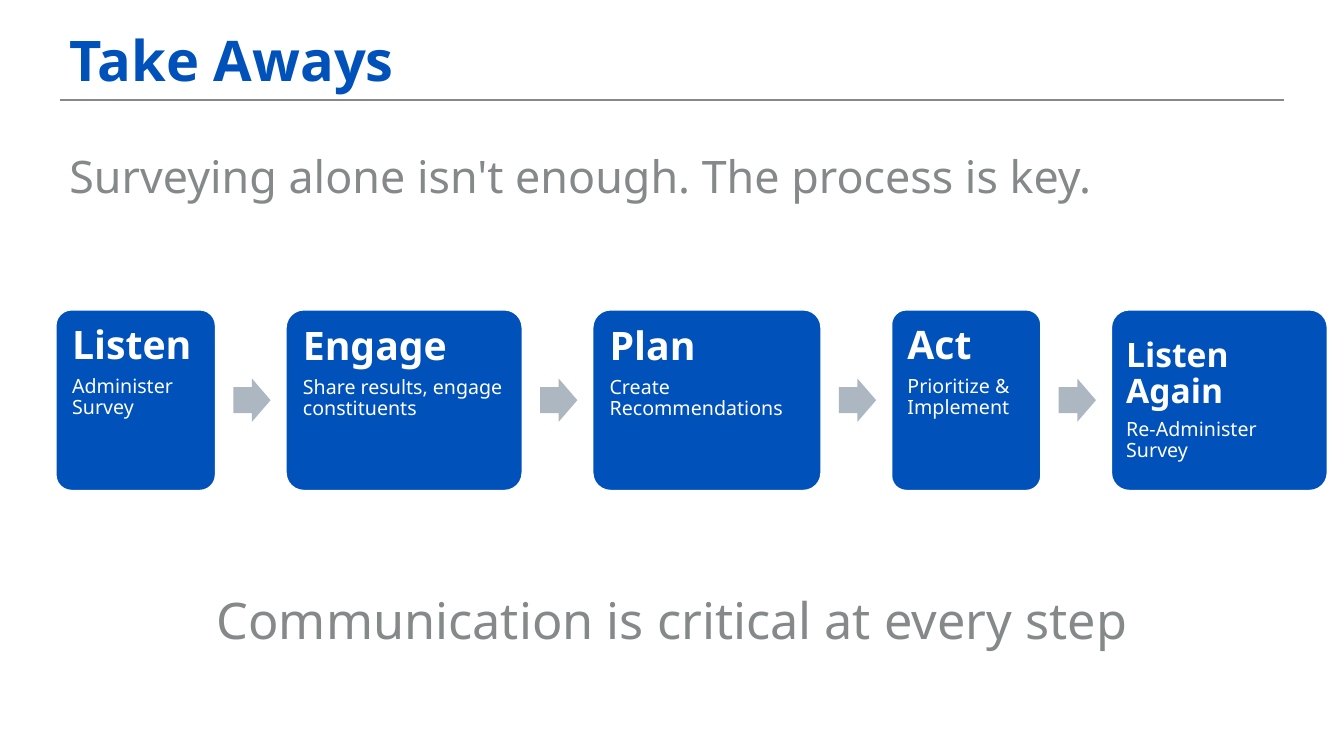
"""Build the Take Aways slide with a five-step process."""
from lxml.etree import SubElement
from pptx import Presentation
from pptx.dml.color import RGBColor
from pptx.enum.shapes import MSO_CONNECTOR, MSO_SHAPE
from pptx.enum.text import MSO_ANCHOR, MSO_AUTO_SIZE, PP_ALIGN
from pptx.oxml.ns import qn
from pptx.util import Cm, Pt

BLUE = RGBColor(0x00, 0x51, 0xBA)
GRAY = RGBColor(0x85, 0x89, 0x8A)
STEEL = RGBColor(0xAC, 0xB7, 0xC1)
WHITE = RGBColor(0xFF, 0xFF, 0xFF)

STEPS = [
    ("Listen", "Administer Survey", 4.04),
    ("Engage", "Share results, engage constituents", 5.97),
    ("Plan", "Create Recommendations", 5.77),
    ("Act", "Prioritize & Implement", 3.78),
    ("Listen Again", "Re-Administer Survey", 5.46),
]
LEFT, TOP, TALL, GAP = 1.4, 7.8, 4.57, 1.76


def write(par, text, size=14, color=WHITE, bold=False,
          align=PP_ALIGN.LEFT, line=1.0, after=0):
    par.alignment = align
    par.line_spacing = line
    par.space_before = Pt(0)
    par.space_after = Pt(after)
    run = par.add_run()
    run.text = text
    font = run.font
    font.name = "Noto Sans"
    font.size = Pt(size)
    font.bold = bold
    font.color.rgb = color


class Deck:
    def __init__(self):
        self.file = Presentation()
        self.file.slide_width = Cm(33.87)
        self.file.slide_height = Cm(19.05)
        self.slide = self.file.slides.add_slide(self.file.slide_layouts[5])
        self.shapes = self.slide.shapes

    def title(self, text, x, y, w, h):
        box = self.shapes.title
        box.left, box.top, box.width, box.height = Cm(x), Cm(y), Cm(w), Cm(h)
        frame = box.text_frame
        frame.auto_size = MSO_AUTO_SIZE.NONE
        frame.vertical_anchor = MSO_ANCHOR.TOP
        frame.margin_left = Cm(0.41)
        write(frame.paragraphs[0], text, 40, BLUE, True, line=0.9, after=6)

    def label(self, text, x, y, w, h, **style):
        frame = self.shapes.add_textbox(Cm(x), Cm(y), Cm(w), Cm(h)).text_frame
        frame.word_wrap = True
        frame.auto_size = MSO_AUTO_SIZE.SHAPE_TO_FIT_TEXT
        write(frame.paragraphs[0], text, color=GRAY, **style)

    def rule(self, x, y, end):
        line = self.shapes.add_connector(
            MSO_CONNECTOR.STRAIGHT, Cm(x), Cm(y), Cm(end), Cm(y))
        line.line.color.rgb = GRAY
        line.line.width = Pt(1.5)
        SubElement(line.element.spPr, qn("a:effectLst"))

    def block(self, kind, x, y, w, h, fill):
        shape = self.shapes.add_shape(kind, Cm(x), Cm(y), Cm(w), Cm(h))
        shape.shadow.inherit = False
        shape.fill.solid()
        shape.fill.fore_color.rgb = fill
        shape.line.fill.background()
        return shape

    def card(self, head, body, x, w, size, pad, anchor):
        shape = self.block(
            MSO_SHAPE.ROUNDED_RECTANGLE, x, TOP, w, TALL, BLUE)
        shape.adjustments[0] = 0.1
        shape.line.color.rgb = WHITE
        shape.line.width = Pt(1.5)
        frame = shape.text_frame
        frame.word_wrap = True
        frame.vertical_anchor = anchor
        frame.margin_left = frame.margin_right = Cm(pad)
        frame.margin_top = frame.margin_bottom = Cm(pad)
        write(frame.paragraphs[0], head, size, bold=True, line=0.9, after=6)
        write(frame.add_paragraph(), body, line=0.9, after=6)

    def arrow(self, x):
        tall = 1.09
        shape = self.block(MSO_SHAPE.RIGHT_ARROW, x, TOP + (TALL - tall) / 2,
                           0.94, tall, STEEL)
        shape.adjustments[0] = 0.6
        shape.adjustments[1] = 0.5


def main():
    deck = Deck()
    deck.title("Take Aways", 1.35, 0.71, 17.78, 1.8)
    deck.label("Surveying alone isn't enough. The process is key.",
               1.5, 3.63, 31.29, 1.63, size=32)
    x = LEFT
    for head, body, wide in STEPS:
        last = head == STEPS[-1][0]
        size, pad, anchor = ((24, 0.25, MSO_ANCHOR.MIDDLE) if last
                             else (28, 0.3, MSO_ANCHOR.TOP))
        deck.card(head, body, x, wide, size, pad, anchor)
        if not last:
            deck.arrow(x + wide + 0.44)
        x += wide + GAP
    deck.label("Communication is critical at every step",
               1.35, 14.73, 31.17, 1.8, size=36, align=PP_ALIGN.CENTER)
    deck.rule(1.5, 2.52, 32.36)
    deck.file.save("out.pptx")


if __name__ == "__main__":
    main()
